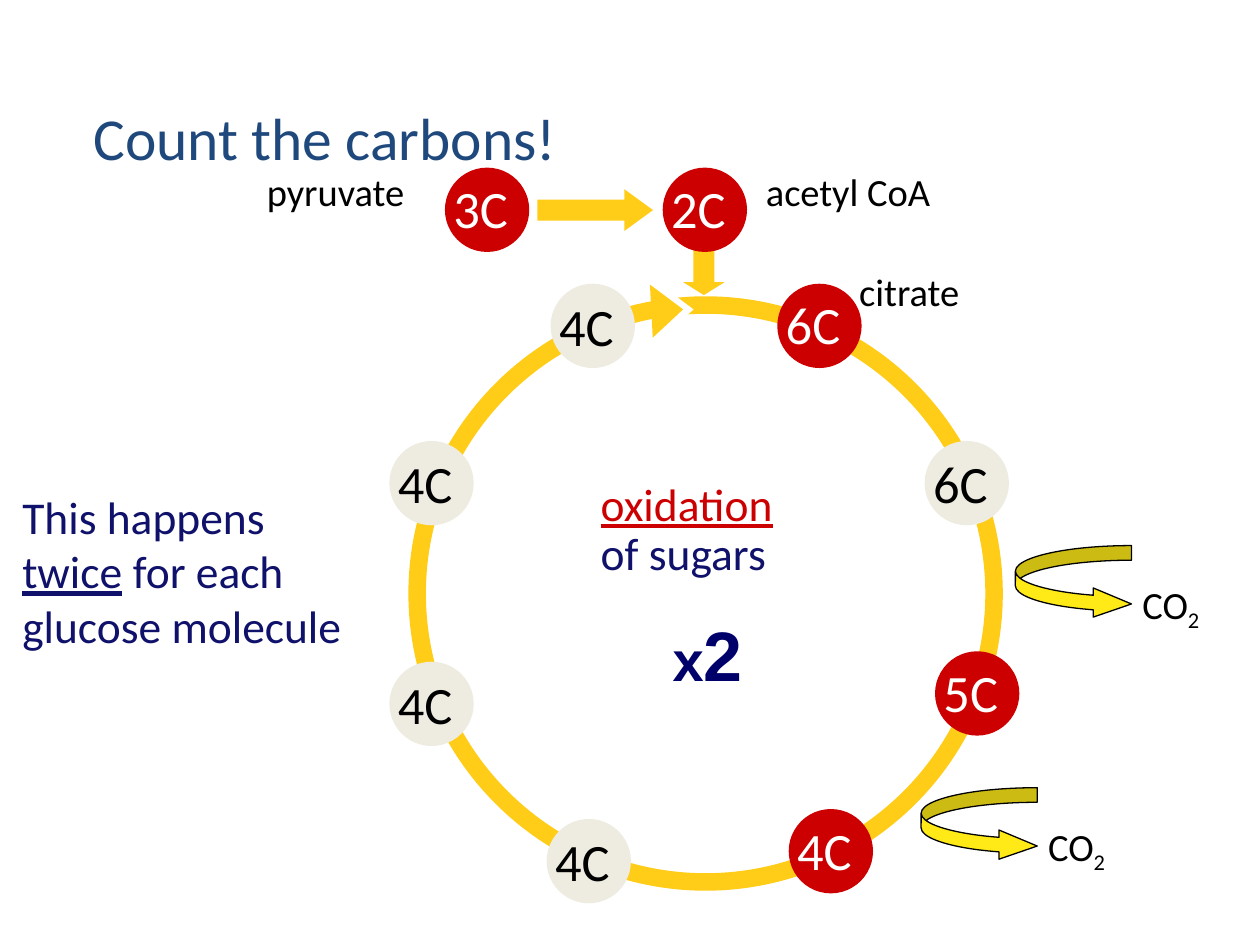
import pptx
import pptx.util
import pptx.dml.color
import pptx.enum.shapes
import pptx.enum.text

Cm = pptx.util.Cm
Pt = pptx.util.Pt
RGB = pptx.dml.color.RGBColor
KIND = pptx.enum.shapes.MSO_SHAPE
ANCHOR = pptx.enum.text.MSO_ANCHOR

GOLD = RGB(0xFF, 0xCC, 0x18)
LEMON = RGB(0xFF, 0xEA, 0x18)
CREAM = RGB(0xEE, 0xEC, 0xE1)
RED = RGB(0xCC, 0x00, 0x00)
BLUE = RGB(0x1F, 0x49, 0x7D)
NAVY = RGB(0x0F, 0x11, 0x6A)
INK = RGB(0x00, 0x00, 0x6A)
BLACK = RGB(0, 0, 0)
WHITE = RGB(0xFF, 0xFF, 0xFF)


def draw(home, kind, box, fill=None, line=None, width=1, adj=(), turn=0):
    """Add a preset shape; box is in centimetres, no colour means none."""
    shape = home.add_shape(kind, *map(Cm, box))
    shape.shadow.inherit = False
    shape.rotation = turn
    for i, value in enumerate(adj):
        shape.adjustments[i] = value
    if fill is None:
        shape.fill.background()
    else:
        shape.fill.solid()
        shape.fill.fore_color.rgb = fill
    if line is None:
        shape.line.fill.background()
    else:
        shape.line.color.rgb = line
        shape.line.width = Pt(width)


def write(shape, runs, size, color, font="Calibri", wrap=False,
          anchor=ANCHOR.MIDDLE):
    """Fill one paragraph from (text, format) runs; a final newline breaks."""
    frame = shape.text_frame
    form = {"word_wrap": wrap, "vertical_anchor": anchor,
            "auto_size": pptx.enum.text.MSO_AUTO_SIZE.SHAPE_TO_FIT_TEXT}
    for key, value in form.items():
        setattr(frame, key, value)
    para = frame.paragraphs[0]
    para.alignment = pptx.enum.text.PP_ALIGN.LEFT
    for words, extra in runs:
        run = para.add_run()
        run.text = words.rstrip("\n")
        look = {"name": font, "size": Pt(size), **extra}
        run.font.color.rgb = look.pop("color", color)
        if look.pop("sub", False):
            run.font._element.set("baseline", "-25000")
        for key, value in look.items():
            setattr(run.font, key, value)
        if words.endswith("\n"):
            para.add_line_break()
    return para


deck = pptx.Presentation()
deck.slide_width, deck.slide_height = Cm(25.4), Cm(19.05)
slide = deck.slides.add_slide(deck.slide_layouts[5])
shapes = slide.shapes

# Title
title = shapes.title
title.left, title.top, title.width, title.height = map(
    Cm, (1.63, 1.9, 11.5, 1.7))
write(title, [("Count the carbons!", {})], 34, BLUE)

# Cycle ring, with the arrow that feeds it
draw(shapes, KIND.DOWN_ARROW, (13.77, 4.88, 0.84, 1.07), GOLD,
     adj=(0.5, 0.312))
draw(shapes, KIND.OVAL, (8.41, 6.15, 11.63, 11.63), line=GOLD, width=10)

# Carbon counts
discs = [
    ("4C", 11.1, 5.72, CREAM), ("6C", 18.64, 8.89, CREAM),
    ("4C", 11.02, 16.51, CREAM), ("4C", 7.85, 13.34, CREAM),
    ("4C", 7.85, 8.89, CREAM), ("2C", 13.36, 3.38, RED),
    ("6C", 15.67, 5.72, RED), ("5C", 18.85, 13.13, RED),
    ("4C", 15.9, 16.31, RED), ("3C", 8.97, 3.38, RED),
]
for count, left, top, fill in discs:
    group = shapes.add_group_shape().shapes
    draw(group, KIND.OVAL, (left, top, 1.7, 1.7), fill)
    drop, color = (0.08, BLACK) if fill == CREAM else (0.05, WHITE)
    box = group.add_textbox(
        *map(Cm, (left - 0.08, top + drop, 1.85, 1.52)))
    write(box, [(count, {})], 30, color)

# Carbon dioxide leaving the cycle
for left, top in ((20.47, 11), (18.57, 15.88)):
    group = shapes.add_group_shape().shapes
    draw(group, KIND.CURVED_RIGHT_ARROW, (left, top, 2.34, 1.47), LEMON,
         BLACK, 0.75, (0.2, 0.4, 0.524))
    box = group.add_textbox(
        *map(Cm, (left + 2.31, top + 0.64, 1.98, 1.19)))
    write(box, [("CO", {}), ("2", {"sub": True})], 22, BLACK)

# Molecule names
for name, left, top, width in (("citrate", 17.07, 5.28, 2.84),
                               ("acetyl CoA", 15.19, 3.25, 4.52),
                               ("pyruvate", 5.13, 3.25, 3.76)):
    box = shapes.add_textbox(*map(Cm, (left, top, width, 1.19)))
    write(box, [(name, {})], 22, BLACK)

# Arrowhead closing the ring, with a white gap behind it
for left, fill in ((13.34, WHITE), (13.13, GOLD)):
    draw(shapes, KIND.RIGHT_ARROW, (left, 5.72, 0.64, 1.07), fill,
         adj=(0.484, 1), turn=356.9)

# Pyruvate to acetyl CoA
draw(shapes, KIND.DOWN_ARROW, (11.58, 3.07, 0.84, 2.33), GOLD,
     adj=(0.5, 0.688), turn=270)

# Remarks
twice = shapes.add_textbox(*map(Cm, (13.31, 12.19, 1.93, 1.96)))
write(twice, [("x", {"bold": True}), ("2", {"bold": True, "size": Pt(40)})],
      32, INK, "Arial")

sugar = shapes.add_textbox(*map(Cm, (11.86, 9.6, 4.65, 2.24)))
para = write(sugar, [("oxidation\n", {"color": RED, "underline": True}),
                     ("of sugars", {})], 26, NAVY, anchor=ANCHOR.TOP)
para.line_spacing = 0.9

note = shapes.add_textbox(*map(Cm, (0.2, 9.73, 7.42, 4.67)))
write(note, [("This happens ", {}), ("twice", {"underline": True}),
             (" for each glucose molecule", {})], 26, NAVY,
      wrap=True, anchor=ANCHOR.TOP)

deck.save("out.pptx")
